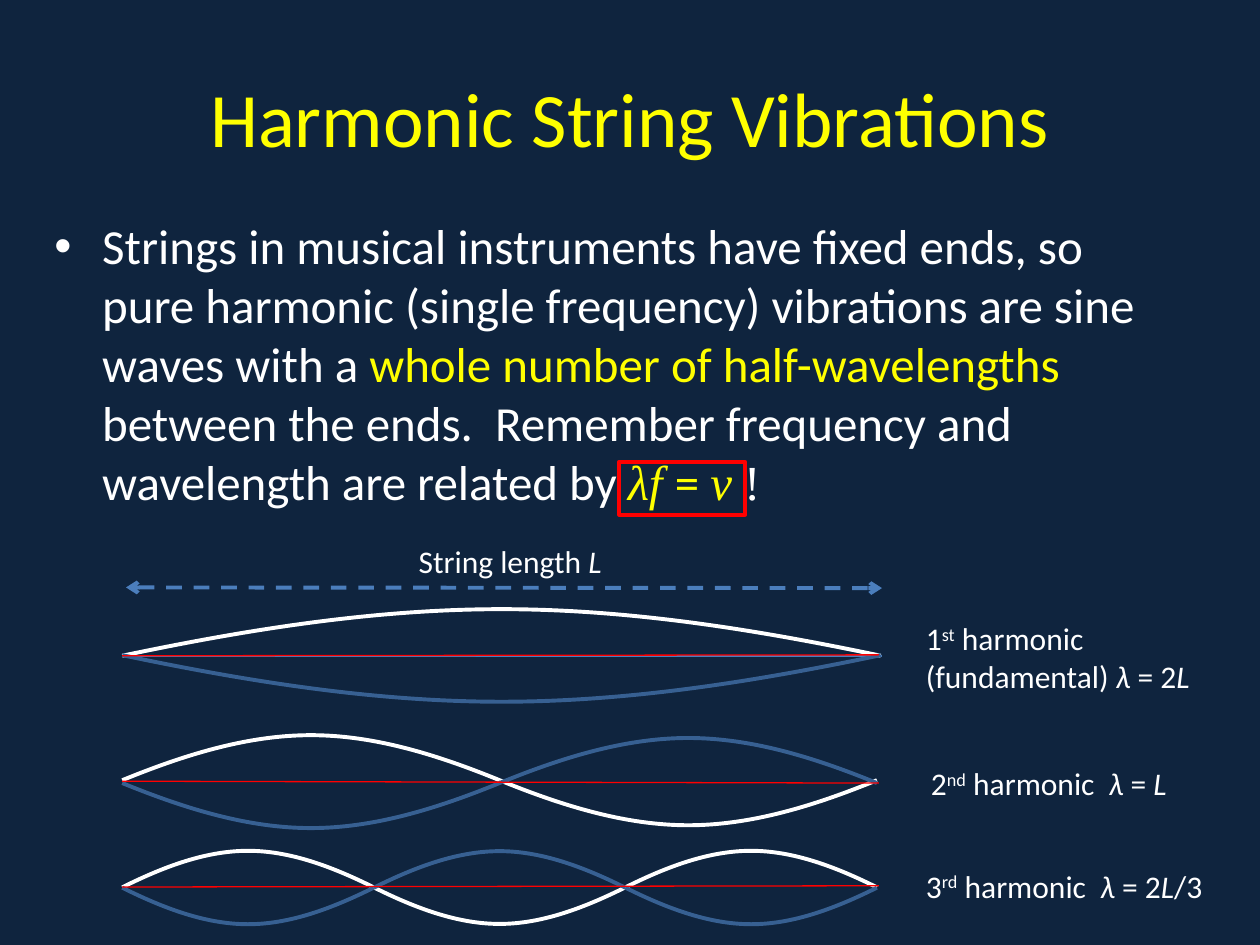
import pptx
import pptx.dml.color
import pptx.enum.dml
import pptx.enum.shapes
import pptx.enum.text
import pptx.oxml.ns
import pptx.util
import lxml.etree

CELL = pptx.util.Inches(0.25)
NAVY, WHITE, YELLOW = "0F243E", "FFFFFF", "FFFF00"
RED, BLUE, DEEP_BLUE = "FF0000", "4B7EBC", "376092"
STRING_LEFT = 3.88
HARMONICS = [
    {"count": 2, "span": 23.96, "white": 24.77, "blue": 24.86, "height": 1.43},
    {"count": 1, "span": 24.08, "white": 20.82, "blue": 20.8, "height": 1.48},
    {"count": 3, "span": 23.96, "white": 28.17, "blue": 28.18, "height": 1.16},
]
AXES = [(28.16, 28.12), (20.82, 20.79), (24.8, 24.86)]
LOBE_RISE = [0, 0.57, 1, 1, 1, 0.57, 0]
ITALIC = {"italic": True}
RAISED = {"raised": True}
MATH = {"font": "Times New Roman", "color": YELLOW, "italic": True}


def grid(*values):
    return [round(value * CELL) for value in values]


def paint(target, color):
    target.solid()
    target.fore_color.rgb = pptx.dml.color.RGBColor.from_string(color)


def add_element(parent, tag, **attributes):
    return lxml.etree.SubElement(parent, pptx.oxml.ns.qn(tag), attributes)


def add_span(para, text, size=18, font="Calibri", color=WHITE, italic=False, raised=False):
    span = para.add_run()
    span.text = text
    span.font.size = pptx.util.Pt(size)
    span.font.name = font
    span.font.italic = italic
    paint(span.font.fill, color)
    if raised:
        span._r.get_or_add_rPr().set("baseline", "30000")


def add_text(page, area, spans, size=18, color=WHITE, centered=False, bullet=False):
    box = page.shapes.add_textbox(*grid(*area))
    box.text_frame.word_wrap = True
    para = box.text_frame.paragraphs[0]
    if centered:
        box.text_frame.vertical_anchor = pptx.enum.text.MSO_ANCHOR.MIDDLE
        para.alignment = pptx.enum.text.PP_ALIGN.CENTER
    if bullet:
        properties = para._p.get_or_add_pPr()
        indent = pptx.util.Inches(0.38)
        properties.set("marL", str(indent))
        properties.set("indent", str(-indent))
        add_element(properties, "a:buFont", typeface="Arial")
        add_element(properties, "a:buChar", char="•")
    for text, style in spans:
        add_span(para, text, **{"size": size, "color": color, **style})


def style_line(shape, color, width):
    paint(shape.line.fill, color)
    shape.line.width = pptx.util.Pt(width)


def add_line(page, start, end, color, width=0.75):
    line = page.shapes.add_connector(
        pptx.enum.shapes.MSO_CONNECTOR.STRAIGHT, *grid(*start, *end))
    style_line(line, color, width)
    add_element(line._element.spPr, "a:effectLst")
    return line


def add_length_arrow(page):
    arrow = add_line(page, (4, 18.65), (28, 18.67), BLUE, 2.25)
    arrow.line.dash_style = pptx.enum.dml.MSO_LINE.DASH
    outline = arrow.line._get_or_add_ln()
    for end in ("a:headEnd", "a:tailEnd"):
        add_element(outline, end, type="arrow")


def bend_segments(shape):
    segments = list(shape._element.iter(pptx.oxml.ns.qn("a:lnTo")))
    for first in range(0, len(segments), 3):
        curve = add_element(segments[first].getparent(), "a:cubicBezTo")
        for segment in segments[first:first + 3]:
            curve.append(segment[0])
            segment.getparent().remove(segment)


def add_lobe(page, left, middle, width, height, color, line_width=2.25):
    steps = len(LOBE_RISE) - 1
    points = [grid(left + width * step / steps, middle - height * rise)
              for step, rise in enumerate(LOBE_RISE)]
    builder = page.shapes.build_freeform(*points[0])
    builder.add_line_segments(points[1:], close=False)
    lobe = builder.convert_to_shape()
    bend_segments(lobe)
    lobe.shadow.inherit = False
    lobe.fill.background()
    style_line(lobe, color, line_width)


def add_harmonic(page, count, span, white, blue, height):
    width = span / count
    for color, middle, direction in ((WHITE, white, 1), (DEEP_BLUE, blue, -1)):
        for index in range(count):
            add_lobe(page, STRING_LEFT + index * width, middle, width,
                     direction * height * (-1) ** index, color)


def add_harmonic_label(page, area, number, ordinal, name, value, ending=""):
    spans = [(number, {}), (ordinal, RAISED), (name, {}), ("λ", ITALIC),
             (value, {}), ("L", ITALIC)]
    if ending:
        spans.append((ending, {}))
    add_text(page, area, spans)


def add_frame(page, area):
    frame = page.shapes.add_shape(pptx.enum.shapes.MSO_SHAPE.RECTANGLE, *grid(*area))
    frame.shadow.inherit = False
    frame.fill.background()
    style_line(frame, RED, 2.25)


def main():
    deck = pptx.Presentation()
    deck.slide_width, deck.slide_height = grid(40, 30)
    page = deck.slides.add_slide(deck.slide_layouts[6])
    paint(page.background.fill, NAVY)

    add_text(page, (2, 1.2, 36, 5), [("Harmonic String Vibrations", {})],
             size=44, color=YELLOW, centered=True)
    add_text(page, (1.33, 6.66, 36.67, 19.8), [
        ("Strings in musical instruments have fixed ends, so pure harmonic "
         "(single frequency) vibrations are sine waves with a ", {}),
        ("whole number of half-wavelengths ", {"color": YELLOW}),
        ("between the ends.  Remember frequency and wavelength are related by ", {}),
        ("λf ", MATH),
        ("= ", {"color": YELLOW}),
        ("v ", MATH),
        ("!", {"font": "Times New Roman"}),
    ], size=28, bullet=True)

    add_lobe(page, 4, 20.83, 24, 0, BLUE, line_width=0.75)
    for harmonic in HARMONICS:
        add_harmonic(page, **harmonic)
    for start, end in AXES:
        add_line(page, (STRING_LEFT, start), (27.9, end), RED)
    add_length_arrow(page)
    add_text(page, (12.9, 17, 8, 1.6), [("String length ", {}), ("L", ITALIC)])

    add_harmonic_label(page, (29, 19.47, 10, 2.84), "1", "st",
                       " harmonic (fundamental) ", " = 2")
    add_harmonic_label(page, (29.16, 24.06, 8.68, 1.6), "2", "nd", " harmonic  ", " = ")
    add_harmonic_label(page, (29, 27.32, 10, 1.6), "3", "rd", " harmonic  ", " = 2", "/3")
    add_frame(page, (19.66, 14.66, 4, 1.68))
    deck.save("out.pptx")


if __name__ == "__main__":
    main()
